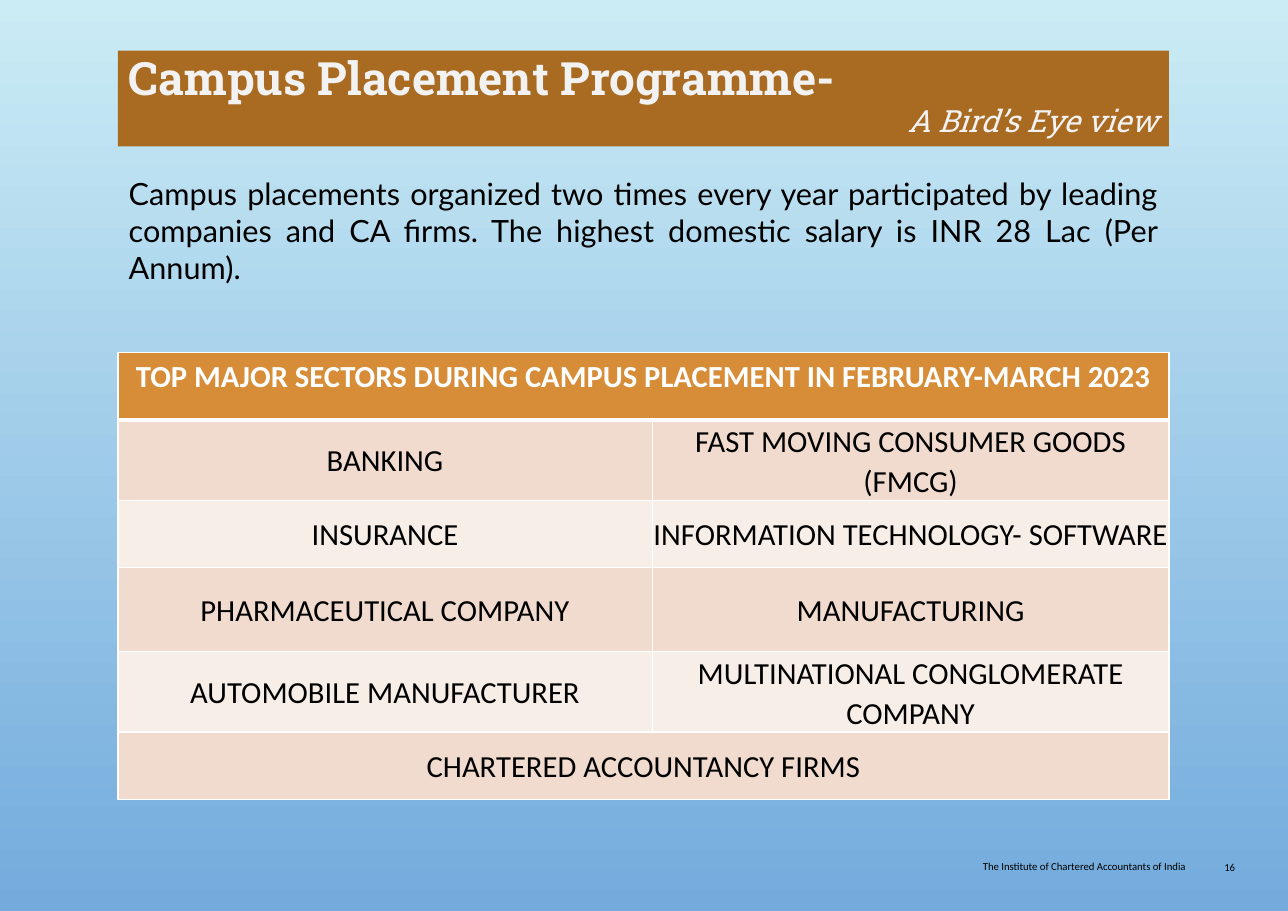
from lxml import etree
from pptx import Presentation
from pptx.dml.color import RGBColor
from pptx.enum.text import MSO_ANCHOR, MSO_AUTO_SIZE, PP_ALIGN
from pptx.oxml.ns import qn
from pptx.util import Inches, Pt

LEFT, CENTER, RIGHT, JUSTIFY = PP_ALIGN.LEFT, PP_ALIGN.CENTER, PP_ALIGN.RIGHT, PP_ALIGN.JUSTIFY
TOP, MIDDLE = MSO_ANCHOR.TOP, MSO_ANCHOR.MIDDLE
NO_FIT = MSO_AUTO_SIZE.NONE

# Content
TITLE = "Campus Placement Programme-"
SUBTITLE = "A Bird’s Eye view"
INTRO = ("Campus placements organized two times every year participated by leading companies "
         "and CA firms. The highest domestic salary is INR 28 Lac (Per Annum).")
TABLE_HEADING = "TOP MAJOR SECTORS DURING CAMPUS PLACEMENT IN FEBRUARY-MARCH 2023"
SECTORS = [
    ("BANKING", "FAST MOVING CONSUMER GOODS (FMCG)"),
    ("INSURANCE", "INFORMATION TECHNOLOGY- SOFTWARE"),
    ("PHARMACEUTICAL COMPANY", "MANUFACTURING"),
    ("AUTOMOBILE MANUFACTURER", "MULTINATIONAL CONGLOMERATE COMPANY"),
    ("CHARTERED ACCOUNTANCY FIRMS",),
]
FOOTER = "The Institute of Chartered Accountants of India"
PAGE_NUMBER = "16"

# Theme
THEME = {
    "sky": ("CBECF5", "73ABDD"),
    "banner": "A96A22",
    "heading": "D78D38",
    "bands": ("F0DBCE", "F8EEE8"),
    "border": "FFFFFF",
    "title": {"name": "Roboto Slab", "size": Pt(30), "bold": True, "color": "F2F2F2"},
    "subtitle": {"name": "Roboto Slab", "size": Pt(20), "bold": False, "italic": True, "color": "F2F2F2"},
    "intro": {"name": "Lato", "size": Pt(20), "color": "000000"},
    "table_heading": {"name": "Calibri", "size": Pt(20), "bold": True, "color": "FFFFFF"},
    "sector": {"name": "Calibri", "size": Pt(20), "bold": False, "color": "000000"},
    "footer": {"name": "Calibri", "size": Pt(7), "color": "000000"},
}

# Layout, in inches
MARGIN, CONTENT_WIDTH = 1.07, 9.54
COLUMN_WIDTHS = (4.85, 4.69)
ROW_HEIGHTS = (0.61, 0.61, 0.61, 0.76, 0.56, 0.61)


def write(para, text, style, align):
    para.alignment = align
    span = para.add_run()
    span.text = text
    for key, value in THEME[style].items():
        if key == "color":
            span.font.color.rgb = RGBColor.from_string(value)
        else:
            setattr(span.font, key, value)


def set_insets(target, inset):
    for side in ("left", "top", "right", "bottom"):
        setattr(target, f"margin_{side}", Inches(inset))


def add_text(page, area, text, style, align, inset=None):
    box = page.shapes.add_textbox(*map(Inches, area))
    box.text_frame.word_wrap = True
    if inset is not None:
        set_insets(box.text_frame, inset)
    write(box.text_frame.paragraphs[0], text, style, align)


def set_borders(cell, top, bottom):
    properties = cell._tc.get_or_add_tcPr()
    widths = {"a:lnL": 1, "a:lnR": 1, "a:lnT": top, "a:lnB": bottom}
    for position, (tag, width) in enumerate(widths.items()):
        line = etree.Element(qn(tag), w=str(Pt(width)))
        fill = etree.SubElement(line, qn("a:solidFill"))
        etree.SubElement(fill, qn("a:srgbClr"), val=THEME["border"])
        properties.insert(position, line)


def add_background(page):
    fill = page.background.fill
    fill.gradient()
    fill.gradient_angle = 270
    for stop, position, color in zip(fill.gradient_stops, (0, 1), THEME["sky"]):
        stop.position = position
        stop.color.rgb = RGBColor.from_string(color)


def add_banner(page):
    banner = page.shapes.title
    banner.left, banner.top = Inches(MARGIN), Inches(0.46)
    banner.width, banner.height = Inches(CONTENT_WIDTH), Inches(0.87)
    banner.fill.solid()
    banner.fill.fore_color.rgb = RGBColor.from_string(THEME["banner"])
    frame = banner.text_frame
    frame.auto_size, frame.word_wrap, frame.vertical_anchor = NO_FIT, True, TOP
    write(frame.paragraphs[0], TITLE, "title", LEFT)
    write(frame.add_paragraph(), SUBTITLE, "subtitle", RIGHT)
    for para in frame.paragraphs:
        para.line_spacing = 0.9


def add_sector_table(page):
    rows = [(TABLE_HEADING,)] + SECTORS
    table = page.shapes.add_table(len(rows), len(COLUMN_WIDTHS), Inches(MARGIN), Inches(3.2),
                                  Inches(CONTENT_WIDTH), Inches(sum(ROW_HEIGHTS))).table
    for column, width in zip(table.columns, COLUMN_WIDTHS):
        column.width = Inches(width)
    for index, texts in enumerate(rows):
        heading = index == 0
        table.rows[index].height = Inches(ROW_HEIGHTS[index])
        color = THEME["heading"] if heading else THEME["bands"][(index - 1) % 2]
        for column in range(len(COLUMN_WIDTHS)):
            cell = table.cell(index, column)
            cell.fill.solid()
            cell.fill.fore_color.rgb = RGBColor.from_string(color)
            set_borders(cell, top=3 if index == 1 else 1, bottom=3 if heading else 1)
        # A row with a single text spans the table
        if len(texts) == 1:
            table.cell(index, 0).merge(table.cell(index, len(COLUMN_WIDTHS) - 1))
        for column, text in enumerate(texts):
            cell = table.cell(index, column)
            para = cell.text_frame.paragraphs[0]
            write(para, text, "table_heading" if heading else "sector", CENTER)
            if not heading:
                cell.vertical_anchor = MIDDLE
                set_insets(cell, 0.01)
                para.line_spacing = 1.07


def main():
    deck = Presentation()
    deck.slide_width, deck.slide_height = Inches(11.69), Inches(8.27)
    page = deck.slides.add_slide(deck.slide_layouts[5])
    add_background(page)
    add_banner(page)
    add_text(page, (MARGIN, 1.54, CONTENT_WIDTH, 1.11), INTRO, "intro", JUSTIFY)
    add_sector_table(page)
    # Footer
    add_text(page, (6.07, 7.81, 4.69, 0.24), FOOTER, "footer", RIGHT, inset=0)
    add_text(page, (10.91, 7.81, 0.3, 0.12), PAGE_NUMBER, "footer", RIGHT, inset=0)
    deck.save("out.pptx")


if __name__ == "__main__":
    main()
